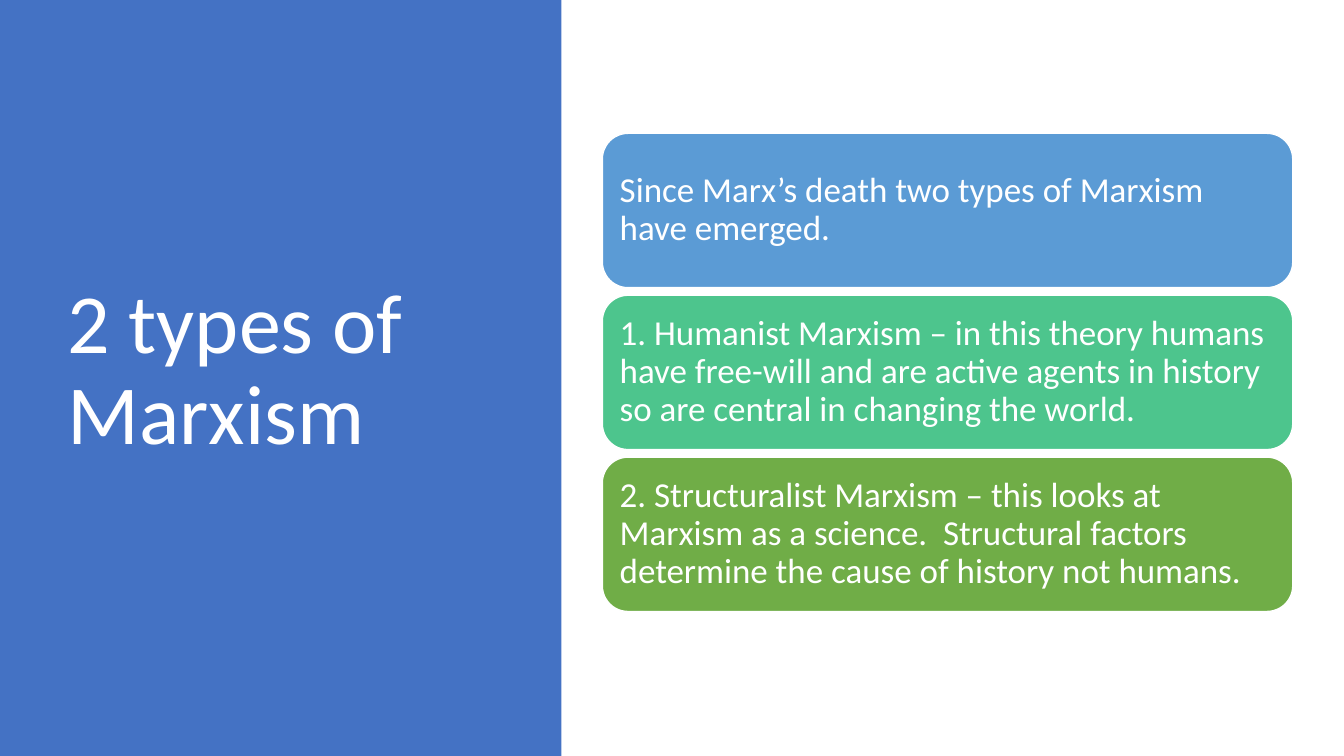
from pptx import Presentation
from pptx.dml.color import RGBColor
from pptx.enum.shapes import MSO_SHAPE
from pptx.enum.text import MSO_ANCHOR, PP_ALIGN
from pptx.util import Cm, Pt

WHITE = "FFFFFF"
CARD_TOP = 3.36
CARD_HEIGHT = 3.89
CARD_PITCH = 4.08
CARDS = [
    ("5B9BD5", "Since Marx’s death two types of Marxism have emerged."),
    ("4DC58D", "1. Humanist Marxism – in this theory humans have free-will and are "
               "active agents in history so are central in changing the world."),
    ("70AD47", "2. Structuralist Marxism – this looks at Marxism as a science.  "
               "Structural factors determine the cause of history not humans."),
]


def rgb(code):
    return RGBColor.from_string(code)


def write(frame, text, size):
    frame.word_wrap = True
    frame.vertical_anchor = MSO_ANCHOR.MIDDLE
    paragraph = frame.paragraphs[0]
    paragraph.text = text
    paragraph.alignment = PP_ALIGN.LEFT
    paragraph.line_spacing = 0.9
    paragraph.font.name = "Calibri"
    paragraph.font.size = Pt(size)
    paragraph.font.color.rgb = rgb(WHITE)


def add_panel(slide, color, width, height):
    panel = slide.shapes.add_shape(MSO_SHAPE.RECTANGLE, 0, 0, width, height)
    panel.shadow.inherit = False
    panel.fill.solid()
    panel.fill.fore_color.rgb = rgb(color)
    panel.line.fill.background()


def add_title(slide, text):
    title = slide.shapes.add_textbox(Cm(1.45), Cm(1.73), Cm(10.57), Cm(15.29))
    write(title.text_frame, text, 60)


def add_card(slide, top, color, text):
    card = slide.shapes.add_shape(
        MSO_SHAPE.ROUNDED_RECTANGLE, Cm(15.18), Cm(top), Cm(17.4), Cm(CARD_HEIGHT))
    card.shadow.inherit = False
    card.fill.solid()
    card.fill.fore_color.rgb = rgb(color)
    card.line.color.rgb = rgb(WHITE)
    card.line.width = Pt(1)
    frame = card.text_frame
    frame.margin_left = frame.margin_right = Cm(0.25)
    frame.margin_top = frame.margin_bottom = Cm(0.25)
    write(frame, text, 25)


def main():
    deck = Presentation()
    deck.slide_width = Cm(33.87)
    deck.slide_height = Cm(19.05)
    slide = deck.slides.add_slide(deck.slide_layouts[6])
    add_panel(slide, "4472C4", Cm(14.15), deck.slide_height)
    add_title(slide, "2 types of Marxism")
    for row, (color, text) in enumerate(CARDS):
        add_card(slide, CARD_TOP + row * CARD_PITCH, color, text)
    deck.save("out.pptx")


if __name__ == "__main__":
    main()
